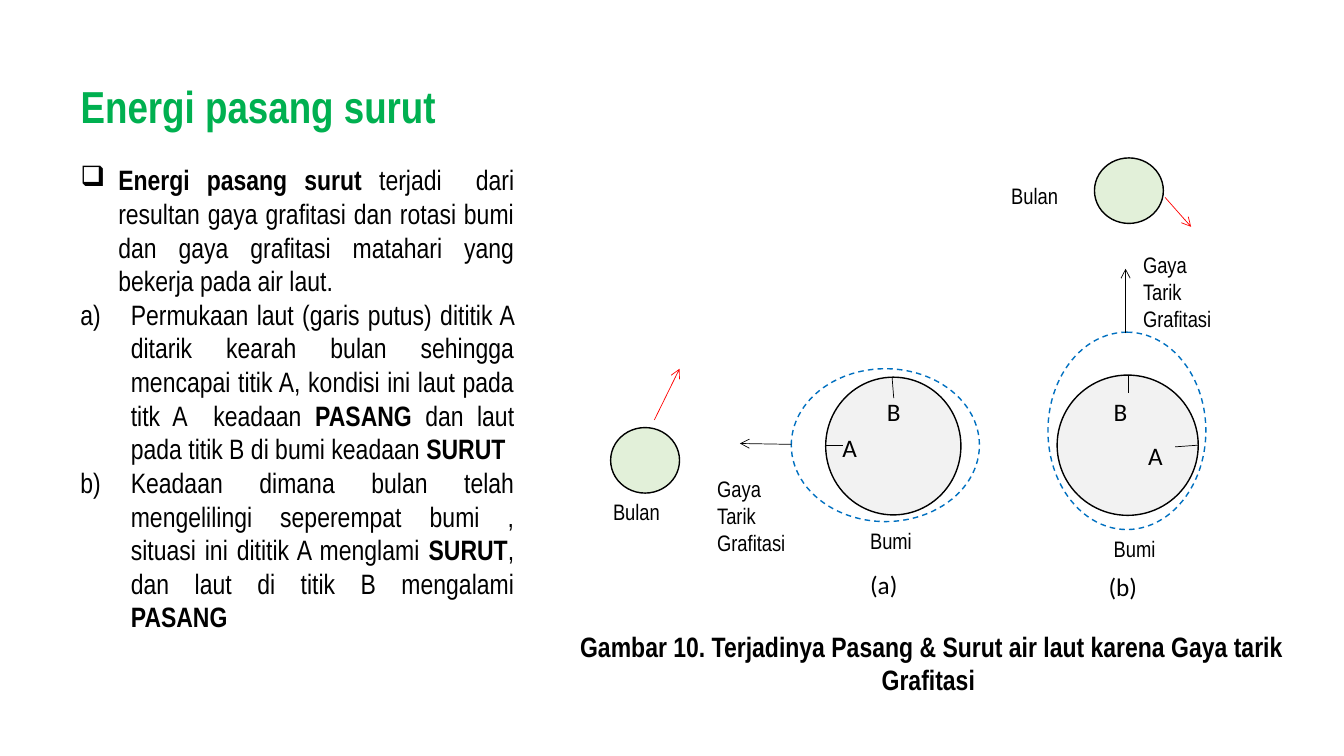
from lxml.etree import SubElement as Sub
from pptx import Presentation
from pptx.dml.color import RGBColor as Rgb
from pptx.enum.dml import MSO_LINE as Dash
from pptx.enum.shapes import MSO_CONNECTOR as Conn, MSO_SHAPE as Kind
from pptx.enum.text import MSO_ANCHOR as Anchor, MSO_AUTO_SIZE as Fit, PP_ALIGN as Align
from pptx.oxml.ns import qn
from pptx.util import Inches, Pt

# Content: places are columns and rows of a 160 by 90 grid
COLS, ROWS, CELL = 160, 90, 1 / 12
HUES = {"black": "000000", "white": "FFFFFF", "green": "00B050", "red": "FF0000",
        "blue": "0070C0", "moon": "E2F0D9", "earth": "F2F2F2"}
NARROW, PLAIN = "Arial Narrow", "Calibri"

TITLE = ("Energi pasang surut", (8.4, 8.8, 46.6, 7.7))
CAPTION = ("Gambar 10. Terjadinya Pasang & Surut air laut karena Gaya tarik Grafitasi ",
           (63.8, 74.3, 94.2, 9.2))
BODY_BOX = (8.4, 18.8, 54, 57.7)
# Each item: bullet, indent in columns, runs of (text, bold)
BODY = [
    ("❑", 4.5, [
        ("Energi pasang surut ", True),
        ("terjadi  dari resultan gaya grafitasi dan rotasi bumi dan gaya grafitasi "
         "matahari yang bekerja pada air laut.", False)]),
    ("a)", 6, [
        ("Permukaan laut (garis putus) dititik A ditarik kearah bulan sehingga mencapai "
         "titik A, kondisi ini laut pada titk A  keadaan ", False),
        ("PASANG ", True),
        ("dan laut pada titik B di bumi keadaan ", False),
        ("SURUT", True)]),
    ("a)", 6, [
        ("Keadaan dimana bulan telah mengelilingi seperempat bumi , situasi ini dititik A "
         "menglami ", False),
        ("SURUT", True),
        (", dan laut di titik B mengalami ", False),
        ("PASANG", True)]),
]

PULL = ["Gaya", "Tarik", "Grafitasi"]
MOON = (8.2, 7.8)
# One entry per diagram; arrows and ticks run from (x, y) to (x, y)
VIEWS = [
    {"turn": 0, "moon": (72.7, 50.9), "earth": (98.3, 44.9, 16.1, 16.4),
     "tide": (94.2, 43.9, 22.4, 18.2),
     "ticks": [(106.2, 44.9, 106.4, 47.4), (98.3, 53, 100.3, 53)],
     "pull": (94.2, 52.9, 88.1, 52.8), "orbit": (77.9, 50, 80.9, 43.9),
     "points": [("A", (99.1, 50.9, 4.2, 4.2)), ("B", (104.4, 46.6, 4.2, 4.2)),
                ("(a)", (102.4, 67.2, 5.9, 4.2))],
     "names": [("Bumi", (102.4, 62.2, 7.6, 3.8)), ("Bulan", (71.8, 58.7, 8.2, 3.8))],
     "force": (84.2, 56, 16.4, 13.1)},
    {"turn": 90, "moon": (130.3, 18.8), "earth": (125.9, 44.6, 16.7, 16.8),
     "tide": (122.4, 41.9, 23.5, 18.8),
     "ticks": [(142.6, 53, 139.9, 53.2), (134.3, 44.6, 134.3, 46.8)],
     "pull": (134, 39.7, 134, 32), "orbit": (138.7, 23.5, 141.8, 27),
     "points": [("A", (135.5, 51.8, 5.2, 3.6)), ("B", (131.4, 46.6, 5, 3.6)),
                ("(b)", (130.8, 67.4, 6, 4.2))],
     "names": [("Bumi", (131.4, 63.1, 7.6, 3.8)), ("Bulan", (119.2, 21.1, 8.2, 3.8))],
     "force": (134.9, 29.3, 10.8, 9.5)},
]


# Helpers
def grid(*cells):
    return [Inches(n * CELL) for n in cells]


def hue(name):
    return Rgb.from_string(HUES[name])


def add_run(par, text, size, font=NARROW, color="black", bold=False):
    run = par.add_run()
    run.text = text
    run.font.size, run.font.name, run.font.bold = Pt(size), font, bold
    run.font.color.rgb = hue(color)


def next_par(frame, num):
    return frame.add_paragraph() if num else frame.paragraphs[0]


def add_label(lines, box, size, font, wrap=False):
    frame = slide.shapes.add_textbox(*grid(*box)).text_frame
    frame.word_wrap = wrap
    for num, line in enumerate(lines):
        add_run(next_par(frame, num), line, size, font)


def add_shape(kind, box, fill, edge="black", turn=0):
    shape = slide.shapes.add_shape(kind, *grid(*box))
    shape.shadow.inherit = False
    shape.rotation = turn
    if fill:
        shape.fill.solid()
        shape.fill.fore_color.rgb = hue(fill)
    else:
        shape.fill.background()
    shape.line.color.rgb, shape.line.width = hue(edge), Pt(1)
    return shape


def add_line(ends, color="black", arrow=False):
    line = slide.shapes.add_connector(Conn.STRAIGHT, *grid(*ends))
    line.line.color.rgb, line.line.width = hue(color), Pt(0.5)
    if arrow:
        Sub(line.line._get_or_add_ln(), qn("a:tailEnd"), type="arrow")
    Sub(line._element.spPr, qn("a:effectLst"))


def set_bullet(par, mark, indent):
    props = par._p.get_or_add_pPr()
    step = Inches(indent * CELL)
    props.set("marL", str(step))
    props.set("indent", str(-step))
    if mark == "a)":
        Sub(props, qn("a:buFont"), typeface="+mj-lt")
        Sub(props, qn("a:buAutoNum"), type="alphaLcParenR")
    else:
        Sub(props, qn("a:buChar"), char=mark)


# Slide and title
deck = Presentation()
deck.slide_width, deck.slide_height = grid(COLS, ROWS)
slide = deck.slides.add_slide(deck.slide_layouts[5])
title = slide.shapes.title
title.left, title.top, title.width, title.height = grid(*TITLE[1])
frame = title.text_frame
frame.auto_size, frame.word_wrap, frame.vertical_anchor = Fit.NONE, True, Anchor.TOP
frame.paragraphs[0].alignment = Align.LEFT
add_run(frame.paragraphs[0], TITLE[0], 32, color="green", bold=True)

# Body list
frame = slide.shapes.add_textbox(*grid(*BODY_BOX)).text_frame
frame.word_wrap = True
for num, (mark, indent, runs) in enumerate(BODY):
    par = next_par(frame, num)
    par.alignment = Align.JUSTIFY
    set_bullet(par, mark, indent)
    for text, bold in runs:
        add_run(par, text, 20, bold=bold)

# Moon and earth diagrams
for view in VIEWS:
    add_shape(Kind.OVAL, view["moon"] + MOON, "moon")
    add_shape(Kind.OVAL, view["earth"], "earth", turn=view["turn"])
    tide = add_shape(Kind.OVAL, view["tide"], None, "blue", view["turn"])
    tide.line.dash_style = Dash.DASH
    for ends in view["ticks"]:
        add_line(ends)
    add_line(view["pull"], arrow=True)
    add_line(view["orbit"], "red", arrow=True)
    for text, box in view["points"]:
        add_label([text], box, 18, PLAIN)
    for text, box in view["names"]:
        add_label([text], box, 16, NARROW)
    add_label(PULL, view["force"], 16, NARROW, wrap=True)

# Caption
frame = add_shape(Kind.RECTANGLE, CAPTION[1], "white", "white").text_frame
frame.word_wrap, frame.vertical_anchor = True, Anchor.MIDDLE
frame.paragraphs[0].alignment = Align.CENTER
add_run(frame.paragraphs[0], CAPTION[0], 20, bold=True)

deck.save("out.pptx")
